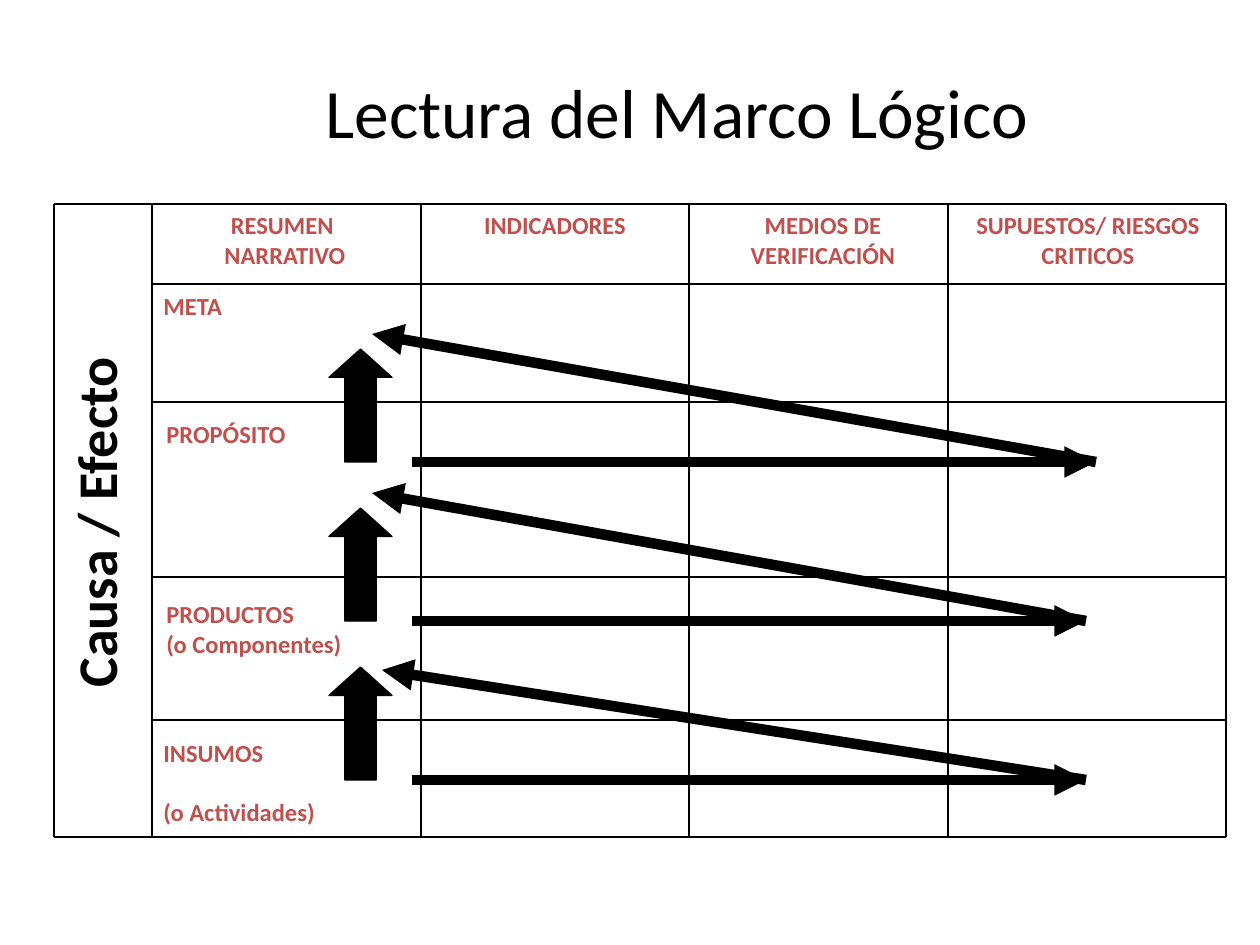
from dataclasses import dataclass

from lxml.etree import SubElement
from pptx import Presentation
from pptx.dml.color import RGBColor
from pptx.enum.shapes import MSO_CONNECTOR as Connector, MSO_SHAPE as Shape
from pptx.enum.text import MSO_ANCHOR as Anchor, MSO_AUTO_SIZE as AutoSize, PP_ALIGN as Align
from pptx.oxml.ns import qn
from pptx.util import Pt

EMU_PER_PX = 914400 / 126


@dataclass(frozen=True)
class Theme:
    font: str = "Calibri"
    ink: RGBColor = RGBColor(0, 0, 0)
    accent: RGBColor = RGBColor(0xC0, 0x50, 0x4D)
    title_size: float = 39.6
    side_size: float = 32
    label_size: float = 14
    paragraph_gap: float = 17
    grid_width: float = 1
    outline_width: float = 0.75
    flow_width: float = 6


THEME = Theme()

TITLE = "Lectura del Marco Lógico"
SIDE_LABEL = "Causa / Efecto"
HEADERS = [
    ("RESUMEN \vNARRATIVO", 151, 268),
    ("INDICADORES", 421, 268),
    ("MEDIOS DE\vVERIFICACIÓN", 689, 268),
    ("SUPUESTOS/ RIESGOS CRITICOS", 937, 302),
]
LEVELS = [
    (["META"], 151, 285),
    (["PROPÓSITO"], 154, 413),
    (["PRODUCTOS\v(o Componentes)"], 154, 593),
    (["INSUMOS", "(o Actividades)"], 151, 732),
]
COLUMN_EDGES = [54, 152, 421, 689, 948, 1226]
ROW_EDGES = [204, 284, 402, 577, 720, 837]

FLOW_TOP, FLOW_STEP = 462, 159
FLOW_START = 412
FLOWS = [(1096, 372, 334), (1086, 372, 493), (1086, 382, 670)]
BLOCK_LEFT, BLOCK_WIDTH, BLOCK_HEIGHT = 329, 63, 113


def px(*values):
    return [round(value * EMU_PER_PX) for value in values]


def format_text(shape, size, color, bold, align):
    for paragraph in shape.text_frame.paragraphs:
        paragraph.alignment = align
        for run in paragraph.runs:
            run.font.name = THEME.font
            run.font.size = Pt(size)
            run.font.bold = bold
            run.font.color.rgb = color


def add_text(slide, paragraphs, box, size=THEME.label_size, color=THEME.accent, align=Align.LEFT):
    shape = slide.shapes.add_textbox(*px(*box))
    frame = shape.text_frame
    frame.word_wrap = True
    frame.text = "\n".join(paragraphs)
    for paragraph in frame.paragraphs[:-1]:
        paragraph.space_after = Pt(THEME.paragraph_gap)
    format_text(shape, size, color, True, align)
    return shape


def add_line(slide, start, end, width=THEME.grid_width, arrow=False):
    connector = slide.shapes.add_connector(Connector.STRAIGHT, *px(*start, *end))
    connector.line.width = Pt(width)
    connector.line.color.rgb = THEME.ink
    if arrow:
        SubElement(connector.line._get_or_add_ln(), qn("a:tailEnd"), type="triangle")
    SubElement(connector._element.spPr, qn("a:effectLst"))


def add_title(slide):
    title = slide.shapes.title
    title.left, title.top, title.width, title.height = px(94, 66, 1166, 89)
    title.text_frame.text = TITLE
    title.text_frame.auto_size = AutoSize.NONE
    title.text_frame.vertical_anchor = Anchor.MIDDLE
    format_text(title, THEME.title_size, THEME.ink, False, Align.CENTER)


def add_grid(slide):
    left, inner, right = COLUMN_EDGES[0], COLUMN_EDGES[1], COLUMN_EDGES[-1]
    top, bottom = ROW_EDGES[0], ROW_EDGES[-1]
    for x in COLUMN_EDGES:
        add_line(slide, (x, top), (x, bottom))
    for y in ROW_EDGES:
        add_line(slide, (left if y in (top, bottom) else inner, y), (right, y))


def add_labels(slide):
    for text, left, width in HEADERS:
        add_text(slide, [text], (left, 204, width, 79), align=Align.CENTER)
    for paragraphs, left, top in LEVELS:
        add_text(slide, paragraphs, (left, top, 268, 117))
    side = add_text(slide, [SIDE_LABEL], (-218, 478, 635, 89), THEME.side_size, THEME.ink, Align.CENTER)
    side.rotation = 270


def add_block_arrow(slide, base):
    box = px(BLOCK_LEFT, base - BLOCK_HEIGHT, BLOCK_WIDTH, BLOCK_HEIGHT)
    arrow = slide.shapes.add_shape(Shape.DOWN_ARROW, *box)
    arrow.rotation = 180
    arrow.adjustments[0] = 0.5
    arrow.adjustments[1] = 0.45
    arrow.shadow.inherit = False
    arrow.fill.solid()
    arrow.fill.fore_color.rgb = THEME.ink
    arrow.line.color.rgb = THEME.ink
    arrow.line.width = Pt(THEME.outline_width)


def add_flows(slide):
    for index, (turn, end_x, end_y) in enumerate(FLOWS):
        y = FLOW_TOP + index * FLOW_STEP
        add_block_arrow(slide, y)
        add_line(slide, (FLOW_START, y), (turn, y), THEME.flow_width, arrow=True)
        add_line(slide, (turn, y), (end_x, end_y), THEME.flow_width, arrow=True)


def main():
    presentation = Presentation()
    presentation.slide_width, presentation.slide_height = px(1260, 945)
    slide = presentation.slides.add_slide(presentation.slide_layouts[5])
    add_title(slide)
    add_flows(slide)
    add_labels(slide)
    add_grid(slide)
    presentation.save("out.pptx")


if __name__ == "__main__":
    main()
